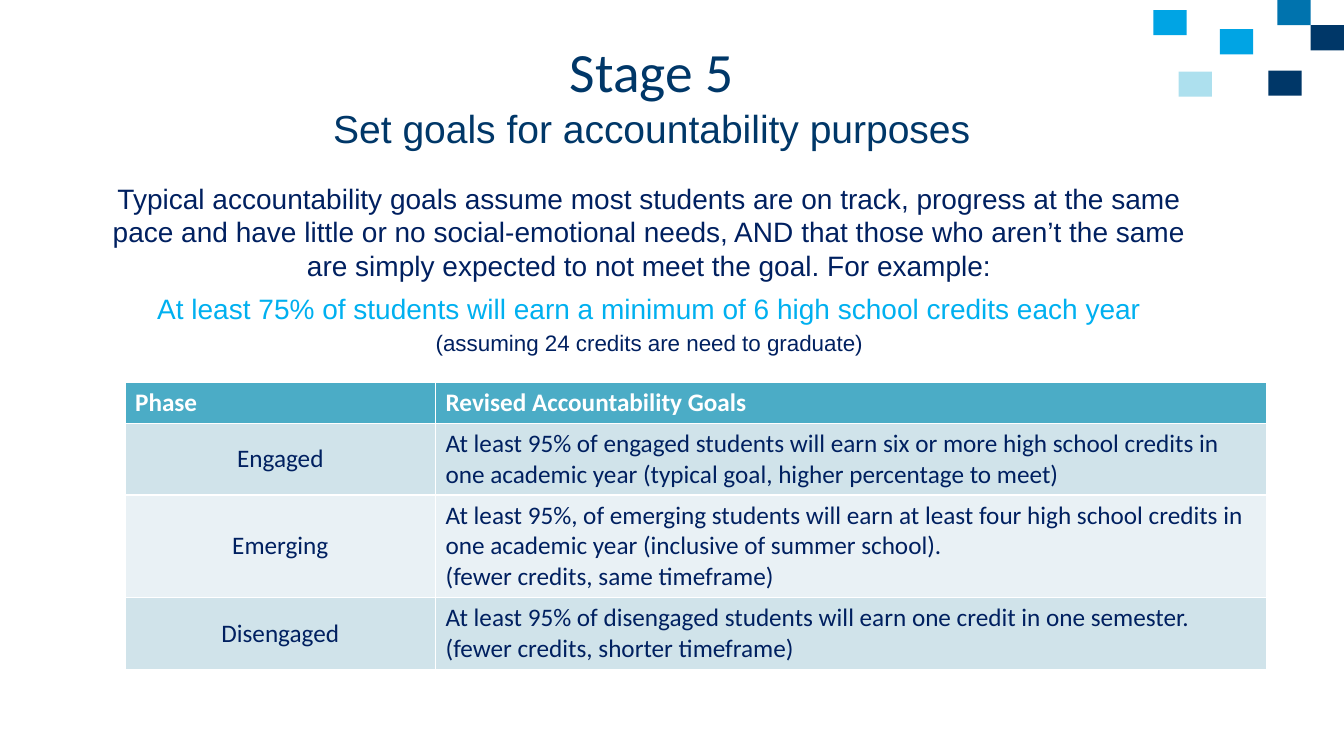
from pptx import Presentation
from pptx.dml.color import RGBColor
from pptx.enum.shapes import MSO_SHAPE
from pptx.enum.text import MSO_ANCHOR, MSO_AUTO_SIZE, PP_ALIGN
from pptx.util import Pt

PX = 9144  # 100 px to the inch
RECT = MSO_SHAPE.RECTANGLE
TOP, MIDDLE = MSO_ANCHOR.TOP, MSO_ANCHOR.MIDDLE
LEFT, CENTER = PP_ALIGN.LEFT, PP_ALIGN.CENTER
NO_FIT = MSO_AUTO_SIZE.NONE

COLORS = {
    "white": "FFFFFF", "navy": "003768", "blue": "0073AE", "sky": "00A4E4",
    "pale": "ADE0EE", "ink": "002060", "goal": "00B0F0",
    "header": "4BACC6", "band": "D0E3EA", "light": "E9F1F5",
}

SQUARES = [
    (1144, 10, "sky"), (1300, 25, "navy"), (1267, 0, "blue"),
    (1169, 71, "pale"), (1210, 29, "sky"), (1258, 70, "navy"),
]

INTRO = [
    ("Typical accountability goals assume most students are on track, progress "
     "at the same pace and have little or no social-emotional needs, AND that "
     "those who aren’t the same are simply expected to not meet the goal. "
     "For example:", dict(line=24)),
    ("At least 75% of students will earn a minimum of 6 high school credits "
     "each year", dict(color="goal", line=24, before=6.5)),
    ("(assuming 24 credits are need to graduate)", dict(size=16, before=3)),
]

# Phase, goal paragraphs, row height
GOALS = [
    ("Phase", ["Revised Accountability Goals"], 41),
    ("Engaged", ["At least 95% of engaged students will earn six or more high "
                 "school credits in one academic year (typical goal, higher "
                 "percentage to meet)"], 71),
    ("Emerging", ["At least 95%, of emerging students will earn at least four "
                  "high school credits in one academic year (inclusive of "
                  "summer school).",
                  "(fewer credits, same timeframe)"], 102),
    ("Disengaged", ["At least 95% of disengaged students will earn one credit "
                    "in one semester.",
                    "(fewer credits, shorter timeframe)"], 71),
]


def px(*lengths):
    return [n * PX for n in lengths]


def rgb(name):
    return RGBColor.from_string(COLORS[name])


def add_text(p, text, size=20, font="Arial", color="ink", bold=False,
             align=CENTER, before=None, line=None):
    p.alignment = align
    if before is not None:
        p.space_before = Pt(before)
    if line is not None:
        p.line_spacing = Pt(line)
    r = p.add_run()
    r.text = text
    r.font.size, r.font.name, r.font.bold = Pt(size), font, bold
    r.font.color.rgb = rgb(color)


def paragraphs(tf, count):
    return [tf.paragraphs[0]] + [tf.add_paragraph() for _ in range(count - 1)]


def add_square(s, x, y, color):
    sp = s.shapes.add_shape(RECT, *px(x, y, 33, 25))
    sp.shadow.inherit = False
    sp.fill.solid()
    sp.fill.fore_color.rgb = rgb(color)
    sp.line.fill.background()


def set_title(s):
    title = s.shapes.title
    title.left, title.top, title.width, title.height = px(80, 45, 1133, 97)
    tf = title.text_frame
    tf.auto_size, tf.vertical_anchor = NO_FIT, MIDDLE
    p = tf.paragraphs[0]
    add_text(p, "Stage 5", size=39.6, font="Calibri", color="navy")
    p.add_line_break()
    add_text(p, "Set goals for accountability purposes", size=27.9, color="navy")


def add_intro(s):
    tf = s.shapes.add_textbox(*px(78, 175, 1132, 190)).text_frame
    tf.word_wrap = True
    for p, (text, style) in zip(paragraphs(tf, len(INTRO)), INTRO):
        add_text(p, text, **style)


def fill_cell(cell, lines, fill, anchor, **style):
    cell.fill.solid()
    cell.fill.fore_color.rgb = rgb(fill)
    cell.vertical_anchor = anchor
    for p, text in zip(paragraphs(cell.text_frame, len(lines)), lines):
        add_text(p, text, size=18, font="Calibri", **style)


def add_goals(s):
    height = sum(h for _, _, h in GOALS)
    frame = s.shapes.add_table(len(GOALS), 2, *px(124, 379, 1132, height))
    table = frame.table
    table.columns[0].width, table.columns[1].width = px(308, 824)
    for i, (phase, goal, row_height) in enumerate(GOALS):
        table.rows[i].height = row_height * PX
        if i == 0:
            fill, anchor, align = "header", TOP, LEFT
            style = dict(color="white", bold=True)
        else:
            fill, anchor, align = "band" if i % 2 else "light", MIDDLE, CENTER
            style = {}
        fill_cell(table.cell(i, 0), [phase], fill, anchor, align=align, **style)
        fill_cell(table.cell(i, 1), goal, fill, anchor, align=LEFT, **style)


def main():
    prs = Presentation()
    prs.slide_width, prs.slide_height = px(1333, 750)
    s = prs.slides.add_slide(prs.slide_layouts[5])

    # Corner squares
    for square in SQUARES:
        add_square(s, *square)

    # Title, introduction and goals by phase
    set_title(s)
    add_intro(s)
    add_goals(s)

    prs.save("out.pptx")


if __name__ == "__main__":
    main()
